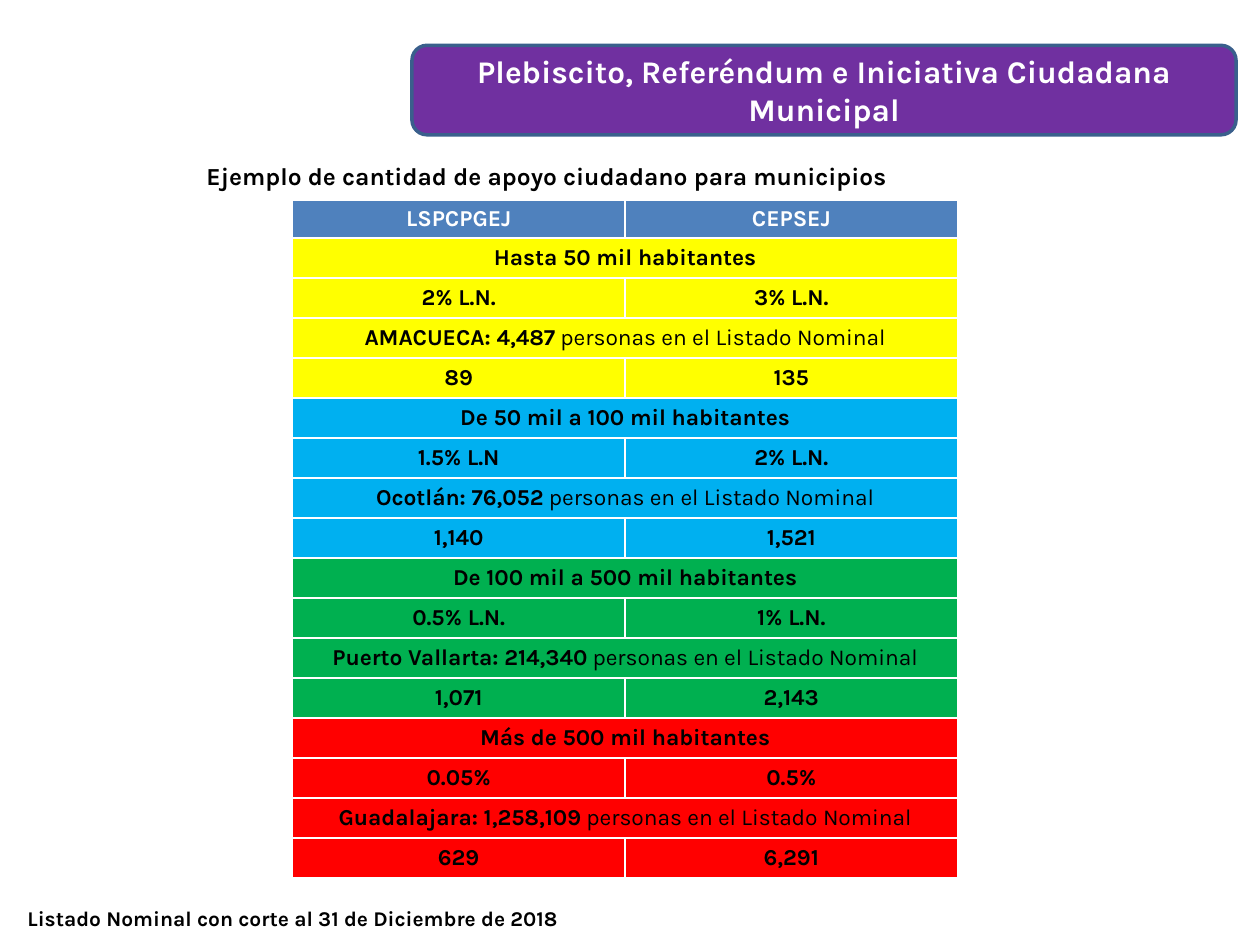
from pptx import Presentation
from pptx.dml.color import RGBColor
from pptx.enum.shapes import MSO_SHAPE
from pptx.enum.text import MSO_ANCHOR, MSO_AUTO_SIZE, PP_ALIGN
from pptx.util import Inches, Pt

COLORS = {
    "white": "FFFFFF", "black": "000000", "purple": "7030A0", "outline": "3A5F8C",
    "header": "4F81BD", "yellow": "FFFF00", "blue": "00B0F0", "green": "00B050",
    "red": "FF0000",
}

# Colour, population range, percentages, municipality and voters, signatures
BRACKETS = [
    ("yellow", "Hasta 50 mil habitantes", ("2% L.N.", "3% L.N."),
     "AMACUECA: 4,487", ("89", "135")),
    ("blue", "De 50 mil a 100 mil habitantes", ("1.5% L.N", "2% L.N."),
     "Ocotlán: 76,052", ("1,140", "1,521")),
    ("green", "De 100 mil a 500 mil habitantes", ("0.5% L.N.", "1% L.N."),
     "Puerto Vallarta: 214,340", ("1,071", "2,143")),
    ("red", "Más de 500 mil habitantes", ("0.05%", "0.5%"),
     "Guadalajara: 1,258,109", ("629", "6,291")),
]


def rgb(color):
    return RGBColor.from_string(COLORS[color])


class SlideBuilder:
    font_name = "Karla"

    def __init__(self, slide):
        self.slide = slide

    def add_runs(self, frame, runs, size, color="black", align=PP_ALIGN.CENTER):
        """Fill the first paragraph with (text, bold) runs."""
        paragraph = frame.paragraphs[0]
        paragraph.alignment = align
        for text, bold in runs:
            run = paragraph.add_run()
            run.text = text
            font = run.font
            font.name, font.size, font.bold = self.font_name, Pt(size), bold
            font.color.rgb = rgb(color)

    def banner(self, text, left, top, width, height):
        banner = self.slide.shapes.add_shape(
            MSO_SHAPE.ROUNDED_RECTANGLE,
            Inches(left), Inches(top), Inches(width), Inches(height))
        banner.shadow.inherit = False
        banner.fill.solid()
        banner.fill.fore_color.rgb = rgb("purple")
        banner.line.color.rgb = rgb("outline")
        banner.line.width = Pt(2)
        frame = banner.text_frame
        frame.word_wrap = True
        frame.vertical_anchor = MSO_ANCHOR.MIDDLE
        self.add_runs(frame, [(text, True)], 18, "white")

    def caption(self, text, left, top, width, height, size):
        caption = self.slide.shapes.add_textbox(
            Inches(left), Inches(top), Inches(width), Inches(height))
        frame = caption.text_frame
        frame.word_wrap = True
        frame.auto_size = MSO_AUTO_SIZE.SHAPE_TO_FIT_TEXT
        self.add_runs(frame, [(text, True)], size, align=PP_ALIGN.JUSTIFY)

    def cell(self, cell, runs, fill, color="black"):
        cell.fill.solid()
        cell.fill.fore_color.rgb = rgb(fill)
        cell.vertical_anchor = MSO_ANCHOR.MIDDLE
        cell.margin_top = cell.margin_bottom = Inches(0.03)
        self.add_runs(cell.text_frame, runs, 13, color)

    def table(self, headers, body, left, top, width, height, header_height):
        """Draw body rows of (fill, cells); a row with one cell spans the table."""
        table = self.slide.shapes.add_table(
            len(body) + 1, len(headers),
            Inches(left), Inches(top), Inches(width), Inches(height)).table
        table.horz_banding = False
        for row in table.rows:
            row.height = Inches((height - header_height) / len(body))
        table.rows[0].height = Inches(header_height)
        for column, header in enumerate(headers):
            self.cell(table.cell(0, column), [(header, True)], "header", "white")
        for row, (fill, cells) in enumerate(body, start=1):
            if len(cells) == 1:
                table.cell(row, 0).merge(table.cell(row, len(headers) - 1))
            for column, runs in enumerate(cells):
                self.cell(table.cell(row, column), runs, fill)


def bracket_rows(fill, population, percentages, municipality, signatures):
    return [
        (fill, [[(population, True)]]),
        (fill, [[(share, True)] for share in percentages]),
        (fill, [[(municipality, True), (" personas en el Listado Nominal", False)]]),
        (fill, [[(count, True)] for count in signatures]),
    ]


def main():
    prs = Presentation()
    prs.slide_width, prs.slide_height = Inches(10), Inches(7.5)
    builder = SlideBuilder(prs.slides.add_slide(prs.slide_layouts[6]))
    builder.banner("Plebiscito, Referéndum e Iniciativa Ciudadana Municipal",
                   3.27, 0.36, 6.54, 0.71)
    builder.caption("Ejemplo de cantidad de apoyo ciudadano para municipios",
                    1.54, 1.23, 8.19, 0.34, 14)
    body = [row for bracket in BRACKETS for row in bracket_rows(*bracket)]
    builder.table(("LSPCPGEJ", "CEPSEJ"), body, 2.32, 1.59, 5.28, 5.38, 0.3)
    builder.caption("Listado Nominal con corte al 31 de Diciembre de 2018",
                    0.12, 7.14, 4.96, 0.3, 12)
    prs.save("out.pptx")


if __name__ == "__main__":
    main()
